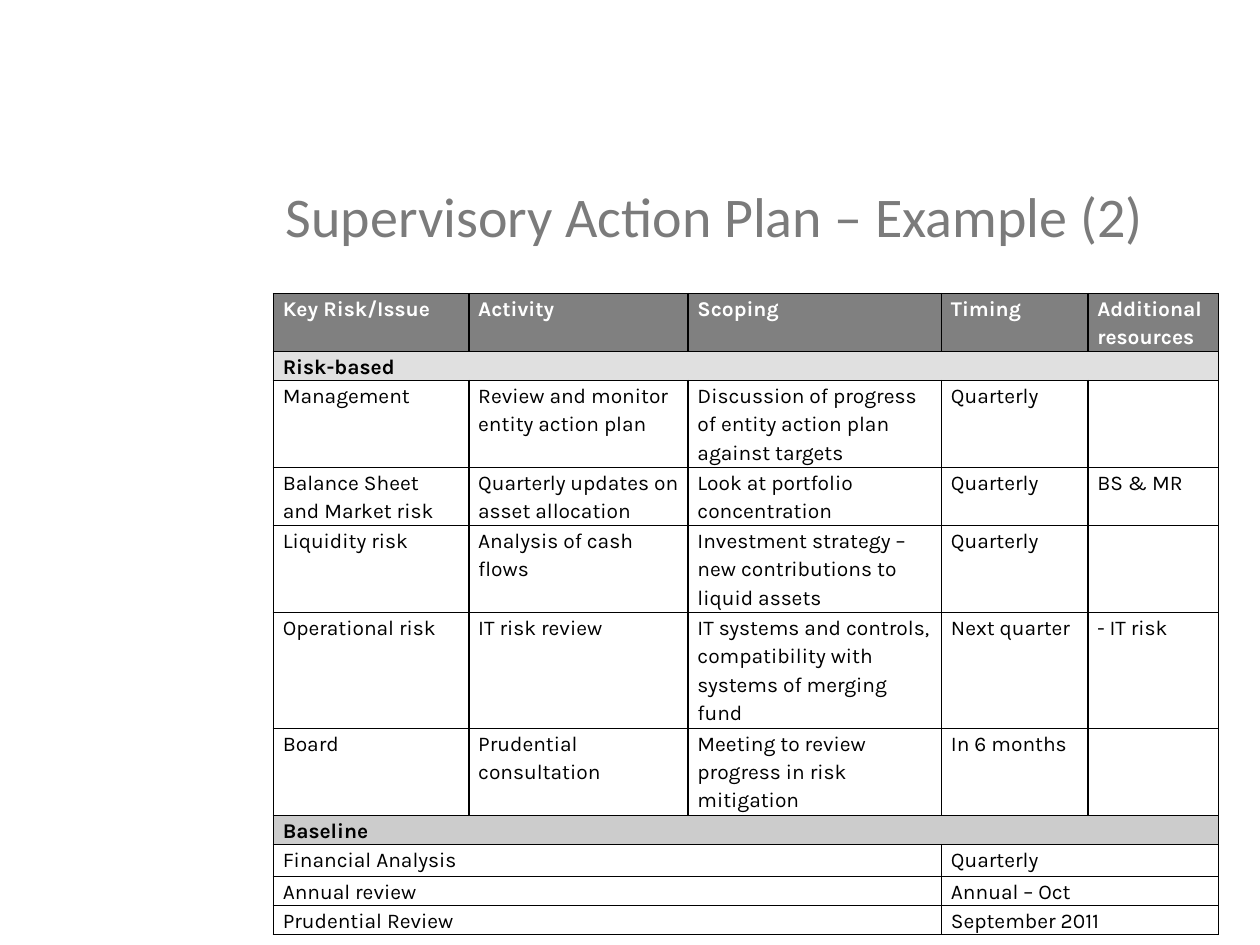
from lxml.etree import SubElement
from pptx import Presentation
from pptx.dml.color import RGBColor
from pptx.enum.text import MSO_ANCHOR
from pptx.oxml.ns import qn
from pptx.util import Cm, Pt

LEFT, WIDTH = 5.51, 19.05
COLUMN_WIDTHS = [3.94, 4.42, 5.11, 2.95, 2.63]

# Each plan row: height in cm, style, texts keyed by their first column
PLAN = [
    (1.12, "header", {0: "Key Risk/Issue", 1: "Activity", 2: "Scoping",
                      3: "Timing", 4: "Additional resources"}),
    (0.48, "risk_section", {0: "Risk-based"}),
    (1.68, "body", {0: "Management", 1: "Review and monitor entity action plan",
                    2: "Discussion of progress of entity action plan against targets",
                    3: "Quarterly", 4: ""}),
    (1.12, "body", {0: "Balance Sheet and Market risk",
                    1: "Quarterly updates on asset allocation",
                    2: "Look at portfolio concentration",
                    3: "Quarterly", 4: "BS & MR"}),
    (1.68, "body", {0: "Liquidity risk", 1: "Analysis of cash flows",
                    2: "Investment strategy – new contributions to liquid assets",
                    3: "Quarterly", 4: ""}),
    (1.68, "body", {0: "Operational risk", 1: "IT risk review",
                    2: "IT systems and controls, compatibility with systems of merging fund",
                    3: "Next quarter", 4: "- IT risk"}),
    (1.45, "body", {0: "Board", 1: "Prudential consultation",
                    2: "Meeting to review progress in risk mitigation",
                    3: "In 6 months", 4: ""}),
    (0.56, "baseline_section", {0: "Baseline"}),
    (0.64, "body", {0: "Financial Analysis", 3: "Quarterly"}),
    (0.56, "body", {0: "Annual review", 3: "Annual – Oct"}),
    (0.56, "body", {0: "Prudential Review", 3: "September 2011"}),
]

# Style: fill, text colour, bold
STYLES = {
    "header": ("808080", "FFFFFF", True),
    "risk_section": ("E0E0E0", "000000", True),
    "baseline_section": ("CCCCCC", "000000", True),
    "body": (None, "000000", False),
}
CELL_FORMAT = {"margin_left": Cm(0.19), "margin_right": Cm(0.19),
               "margin_top": 0, "margin_bottom": 0,
               "vertical_anchor": MSO_ANCHOR.TOP}


def rgb(value):
    return RGBColor.from_string(value)


def apply(target, values):
    for name, value in values.items():
        setattr(target, name, value)


def write(paragraph, text, color, **font_format):
    run = paragraph.add_run()
    run.text = text
    apply(run.font, font_format)
    run.font.color.rgb = rgb(color)


def add_title(slide, text):
    title = slide.shapes.add_textbox(Cm(LEFT), Cm(2.74), Cm(WIDTH), Cm(3.18))
    apply(title.text_frame, {"word_wrap": True, "vertical_anchor": MSO_ANCHOR.MIDDLE})
    write(title.text_frame.paragraphs[0], text, "7B7B7B", name="Calibri", size=Pt(32))


def draw_borders(cell, color="000000"):
    properties = cell._tc.get_or_add_tcPr()
    for side in ("lnL", "lnR", "lnT", "lnB"):
        line = SubElement(properties, qn(f"a:{side}"), w=str(Pt(1)))
        fill = SubElement(line, qn("a:solidFill"))
        SubElement(fill, qn("a:srgbClr"), val=color)


def format_cell(cell, fill):
    apply(cell, CELL_FORMAT)
    draw_borders(cell)
    if fill:
        cell.fill.solid()
        cell.fill.fore_color.rgb = rgb(fill)
    else:
        cell.fill.background()


def fill_row(table, row, style, texts):
    """Write one plan row; each text spans up to the next one's column."""
    fill, color, bold = STYLES[style]
    last = len(COLUMN_WIDTHS) - 1
    for column in range(last + 1):
        format_cell(table.cell(row, column), fill)
    starts = list(texts)
    ends = [start - 1 for start in starts[1:]] + [last]
    for start, end in zip(starts, ends):
        cell = table.cell(row, start)
        if end > start:
            cell.merge(table.cell(row, end))
        if texts[start]:
            paragraph = cell.text_frame.paragraphs[0]
            paragraph.line_spacing = 1.15
            write(paragraph, texts[start], color, name="Karla", size=Pt(12), bold=bold)


def add_plan(slide):
    total_height = sum(height for height, _, _ in PLAN)
    table = slide.shapes.add_table(len(PLAN), len(COLUMN_WIDTHS), Cm(LEFT), Cm(5.92),
                                   Cm(WIDTH), Cm(total_height)).table
    apply(table, {"first_row": False, "horz_banding": False})
    for column, width in zip(table.columns, COLUMN_WIDTHS):
        column.width = Cm(width)
    for row, (height, style, texts) in enumerate(PLAN):
        table.rows[row].height = Cm(height)
        fill_row(table, row, style, texts)


def main():
    presentation = Presentation()
    apply(presentation, {"slide_width": Cm(25.4), "slide_height": Cm(19.05)})
    slide = presentation.slides.add_slide(presentation.slide_layouts[6])
    add_title(slide, "Supervisory Action Plan – Example (2)")
    add_plan(slide)
    presentation.save("out.pptx")


if __name__ == "__main__":
    main()
